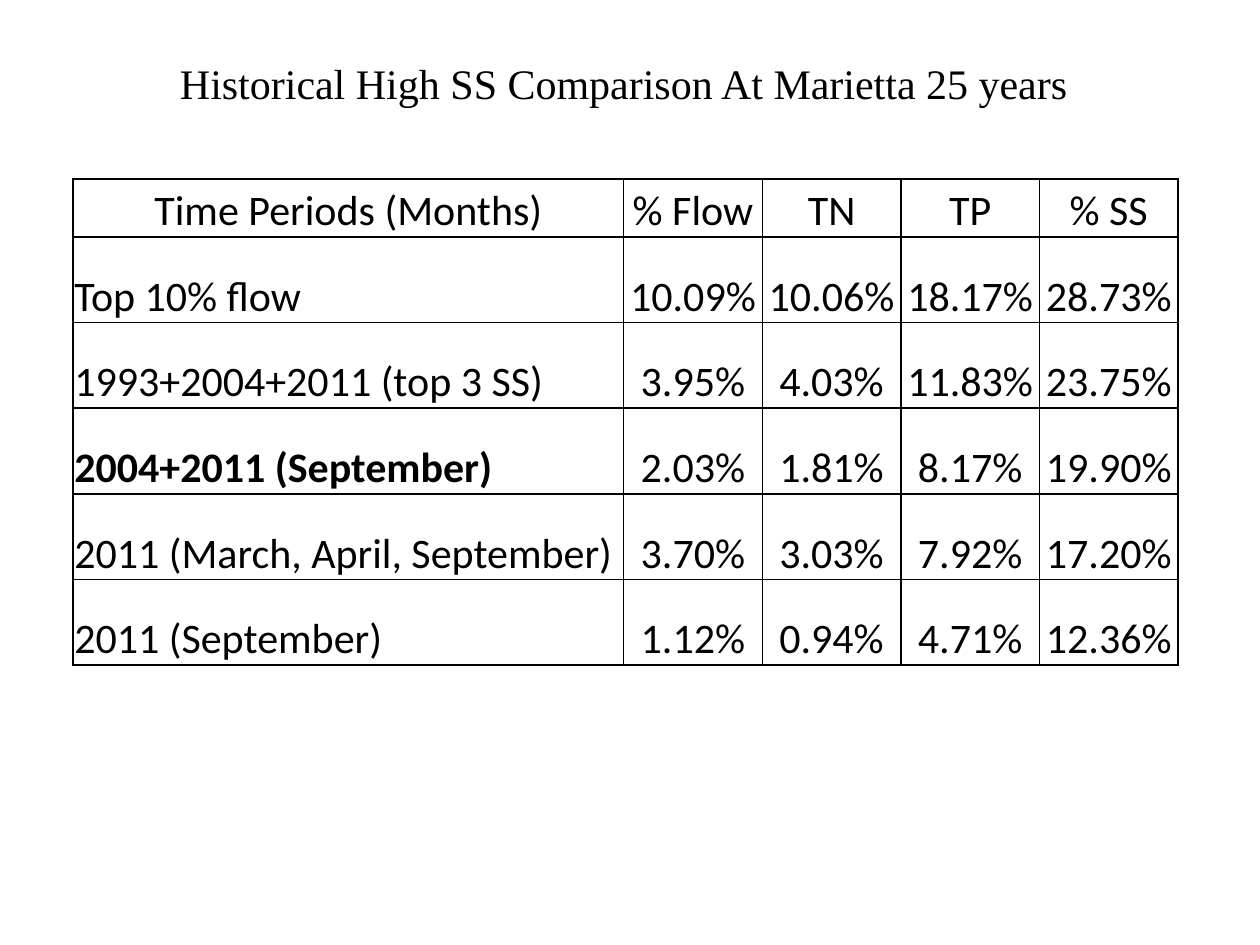
from lxml.etree import SubElement
from pptx import Presentation
from pptx.dml.color import RGBColor
from pptx.enum.text import MSO_ANCHOR, MSO_AUTO_SIZE, PP_ALIGN
from pptx.oxml.ns import qn
from pptx.util import Inches, Pt

HUES = {"ink": "000000", "paper": "FFFFFF"}
HEAD = "Historical High SS Comparison At Marietta 25 years"
ROWS = [
    ("Time Periods (Months)", "% Flow", "TN", "TP", "% SS"),
    ("Top 10% flow", "10.09%", "10.06%", "18.17%", "28.73%"),
    ("1993+2004+2011 (top 3 SS)", "3.95%", "4.03%", "11.83%", "23.75%"),
    ("2004+2011 (September)", "2.03%", "1.81%", "8.17%", "19.90%"),
    ("2011 (March, April, September)", "3.70%", "3.03%", "7.92%", "17.20%"),
    ("2011 (September)", "1.12%", "0.94%", "4.71%", "12.36%"),
]
BOLD = "2004+2011 (September)"
WIDE = [4.37] + [1.1] * 4
TALL = [0.46] + [0.68] * 5
CELL = {
    "vertical_anchor": MSO_ANCHOR.BOTTOM,
    "margin_left": Inches(0.01),
    "margin_top": Inches(0.01),
    "margin_right": Inches(0.01),
    "margin_bottom": 0,
}


def apply(item, form):
    """Set each attribute named in the format dict."""
    for key, value in form.items():
        setattr(item, key, value)


def write(frame, text, face, align=PP_ALIGN.LEFT, bold=False):
    """Put one styled line of text in a frame."""
    para = frame.paragraphs[0]
    para.alignment = align
    run = para.add_run()
    run.text = text
    apply(run.font, {"name": face, "size": Pt(24), "bold": bold})
    run.font.color.rgb = RGBColor.from_string(HUES["ink"])


def border(cell):
    """Draw a thin line on all four sides of a cell."""
    props = cell._tc.get_or_add_tcPr()
    for side in ("a:lnL", "a:lnR", "a:lnT", "a:lnB"):
        line = SubElement(props, qn(side), w=str(Pt(1)))
        fill = SubElement(line, qn("a:solidFill"))
        SubElement(fill, qn("a:srgbClr"), val=HUES["ink"])


def add_title(slide):
    """Add the heading above the table."""
    box = slide.shapes.add_textbox(Inches(1.33), Inches(0.41), Inches(7.33), Inches(0.5))
    apply(box.text_frame, {"word_wrap": True, "auto_size": MSO_AUTO_SIZE.SHAPE_TO_FIT_TEXT})
    write(box.text_frame, HEAD, "Times New Roman")


def add_grid(slide):
    """Add the table of shares by time period."""
    size = Inches(sum(WIDE)), Inches(sum(TALL))
    table = slide.shapes.add_table(
        len(ROWS), len(WIDE), Inches(0.58), Inches(1.42), *size
    ).table
    apply(table, {"first_row": False, "horz_banding": False})
    for col, width in zip(table.columns, WIDE):
        col.width = Inches(width)
    for r, (row, height) in enumerate(zip(ROWS, TALL)):
        table.rows[r].height = Inches(height)
        for c, text in enumerate(row):
            cell = table.cell(r, c)
            apply(cell, CELL)
            border(cell)
            cell.fill.background()
            align = PP_ALIGN.LEFT if r and not c else PP_ALIGN.CENTER
            write(cell.text_frame, text, "Calibri", align, text == BOLD)


def main():
    """Build the slide and save it."""
    deck = Presentation()
    apply(deck, {"slide_width": Inches(10), "slide_height": Inches(7.5)})
    slide = deck.slides.add_slide(deck.slide_layouts[6])
    fill = slide.background.fill
    fill.solid()
    fill.fore_color.rgb = RGBColor.from_string(HUES["paper"])
    add_grid(slide)
    add_title(slide)
    deck.save("out.pptx")


if __name__ == "__main__":
    main()
